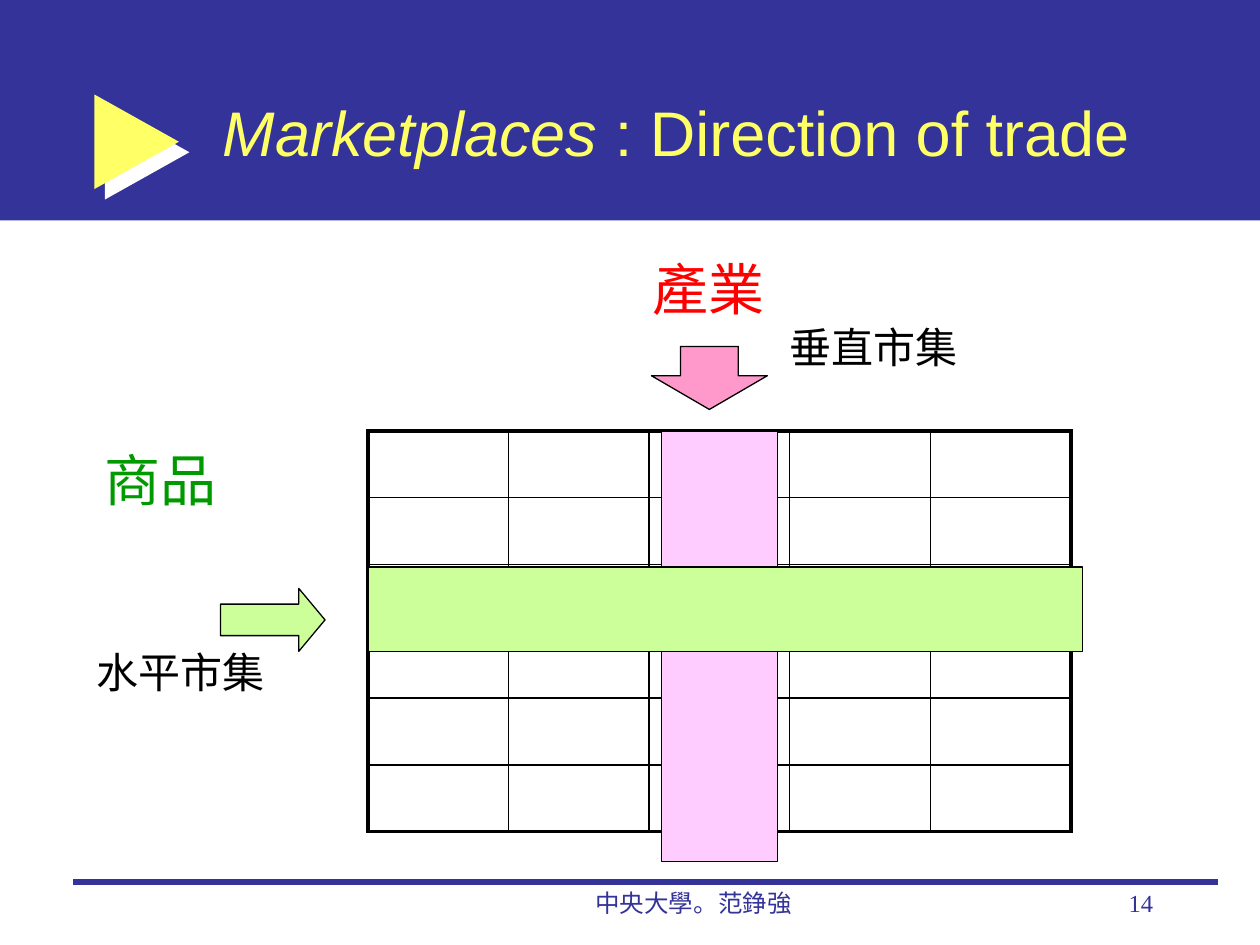
from lxml import etree
from pptx import Presentation
from pptx import util as u
from pptx.dml.color import RGBColor
from pptx.enum import shapes, text
from pptx.oxml import ns, xmlchemy

NAVY, YELLOW, BLACK = "333399", "FFFF66", "000000"
GREEN, PINK, ROSE = "CCFF99", "FFCCFF", "FF99CC"
SHAPE = shapes.MSO_SHAPE
ALIGN = text.PP_ALIGN


def rgb(value):
    return RGBColor.from_string(value)


def inches(values):
    return [u.Inches(v) for v in values]


class Deck:
    """Holds the text style and the slide being drawn."""

    font = "Times New Roman"

    def __init__(self, slide):
        self.s = slide

    def shape(self, kind, at, fill, line=None, adj=()):
        sp = self.s.shapes.add_shape(kind, *inches(at))
        sp.shadow.inherit = False
        for i, value in enumerate(adj):
            sp.adjustments[i] = value
        sp.fill.solid()
        sp.fill.fore_color.rgb = rgb(fill)
        if line:
            sp.line.color.rgb = rgb(line)
            sp.line.width = u.Pt(0.75)
        else:
            sp.line.fill.background()
        return sp

    def hard_shadow(self, sp, color, distance, degrees):
        """Give a shape an unblurred offset shadow."""
        effects = sp._element.spPr.find(ns.qn("a:effectLst"))
        shadow = etree.SubElement(effects, ns.qn("a:outerShdw"), dist=str(u.Pt(distance)),
                                  dir=str(degrees * 60000), algn="ctr", rotWithShape="0")
        etree.SubElement(shadow, ns.qn("a:srgbClr"), val=color)

    def line(self, start, end, color, width):
        c = self.s.shapes.add_connector(shapes.MSO_CONNECTOR.STRAIGHT, *inches(start + end))
        c.line.color.rgb = rgb(color)
        c.line.width = u.Pt(width)
        etree.SubElement(c._element.spPr, ns.qn("a:effectLst"))

    def text(self, at, runs, size, color, font=None, align=ALIGN.LEFT, wrap=True,
             anchor=text.MSO_ANCHOR.TOP):
        """Add a text box; runs are (words, italic) pairs."""
        tf = self.s.shapes.add_textbox(*inches(at)).text_frame
        tf.word_wrap = wrap
        tf.vertical_anchor = anchor
        if not wrap:
            tf.auto_size = text.MSO_AUTO_SIZE.SHAPE_TO_FIT_TEXT
        p = tf.paragraphs[0]
        p.alignment = align
        for words, italic in runs:
            r = p.add_run()
            r.text = words
            r.font.name = font or self.font
            r.font.size = u.Pt(size)
            r.font.italic = italic
            r.font.color.rgb = rgb(color)

    def label(self, at, words, size, color):
        self.text(at, [(words, False)], size, color, wrap=False)

    def footer(self, at, words, align):
        self.text(at, [(words, False)], 14, NAVY, align=align)

    def border(self, cell, widths):
        """Draw left, right, top and bottom cell borders, in points."""
        tc_pr = cell._tc.get_or_add_tcPr()
        for i, (side, width) in enumerate(zip("LRTB", widths)):
            ln = xmlchemy.OxmlElement(f"a:ln{side}")
            ln.set("w", str(u.Pt(width)))
            fill = etree.SubElement(ln, ns.qn("a:solidFill"))
            etree.SubElement(fill, ns.qn("a:srgbClr"), val=BLACK)
            tc_pr.insert(i, ln)

    def grid(self, at, rows, cols, inner=1, outer=2.25):
        table = self.s.shapes.add_table(rows, cols, *inches(at)).table
        table.first_row = table.horz_banding = False
        for r in range(rows):
            for c in range(cols):
                cell = table.cell(r, c)
                cell.fill.background()
                edges = (c == 0, c == cols - 1, r == 0, r == rows - 1)
                self.border(cell, [outer if edge else inner for edge in edges])


def main():
    prs = Presentation()
    prs.slide_width, prs.slide_height = inches((10, 7.5))
    deck = Deck(prs.slides.add_slide(prs.slide_layouts[6]))

    deck.shape(SHAPE.RECTANGLE, (0, 0, 10, 1.75), NAVY)
    marker = deck.shape(SHAPE.RIGHT_ARROW, (0.75, 0.75, 0.67, 0.75), YELLOW, adj=(0.384, 1))
    deck.hard_shadow(marker, "FFFFFF", 8.5, 45)
    deck.line((0.58, 7), (9.67, 7), NAVY, 3)
    deck.text((1.67, 0.42, 7.58, 1.25),
              [("Marketplaces", True), (" : Direction of trade", False)],
              36, YELLOW, font="Arial", anchor=text.MSO_ANCHOR.MIDDLE)

    deck.grid((2.92, 3.42, 5.58, 3.18), rows=6, cols=5)

    deck.label((5.08, 1.97, 1.09, 0.63), "產業", 32, "FF0000")
    deck.shape(SHAPE.DOWN_ARROW, (5.17, 2.75, 0.92, 0.5), ROSE, BLACK, (0.5, 0.535))
    deck.label((6.17, 2.5, 1.53, 0.5), "垂直市集", 24, BLACK)
    deck.shape(SHAPE.RECTANGLE, (5.25, 3.42, 0.92, 3.42), PINK, BLACK)

    deck.label((0.73, 3.49, 1.09, 0.63), "商品", 32, "009900")
    deck.shape(SHAPE.RIGHT_ARROW, (1.75, 4.67, 0.83, 0.5), GREEN, BLACK, (0.5, 0.417))
    deck.label((0.67, 5.08, 1.53, 0.5), "水平市集", 24, BLACK)
    deck.shape(SHAPE.RECTANGLE, (2.92, 4.5, 5.67, 0.67), GREEN, BLACK)

    deck.footer((3.92, 7, 3.17, 0.5), "中央大學。范錚強", ALIGN.CENTER)
    deck.footer((7.17, 7, 2.08, 0.5), "14", ALIGN.RIGHT)
    prs.save("out.pptx")


if __name__ == "__main__":
    main()
